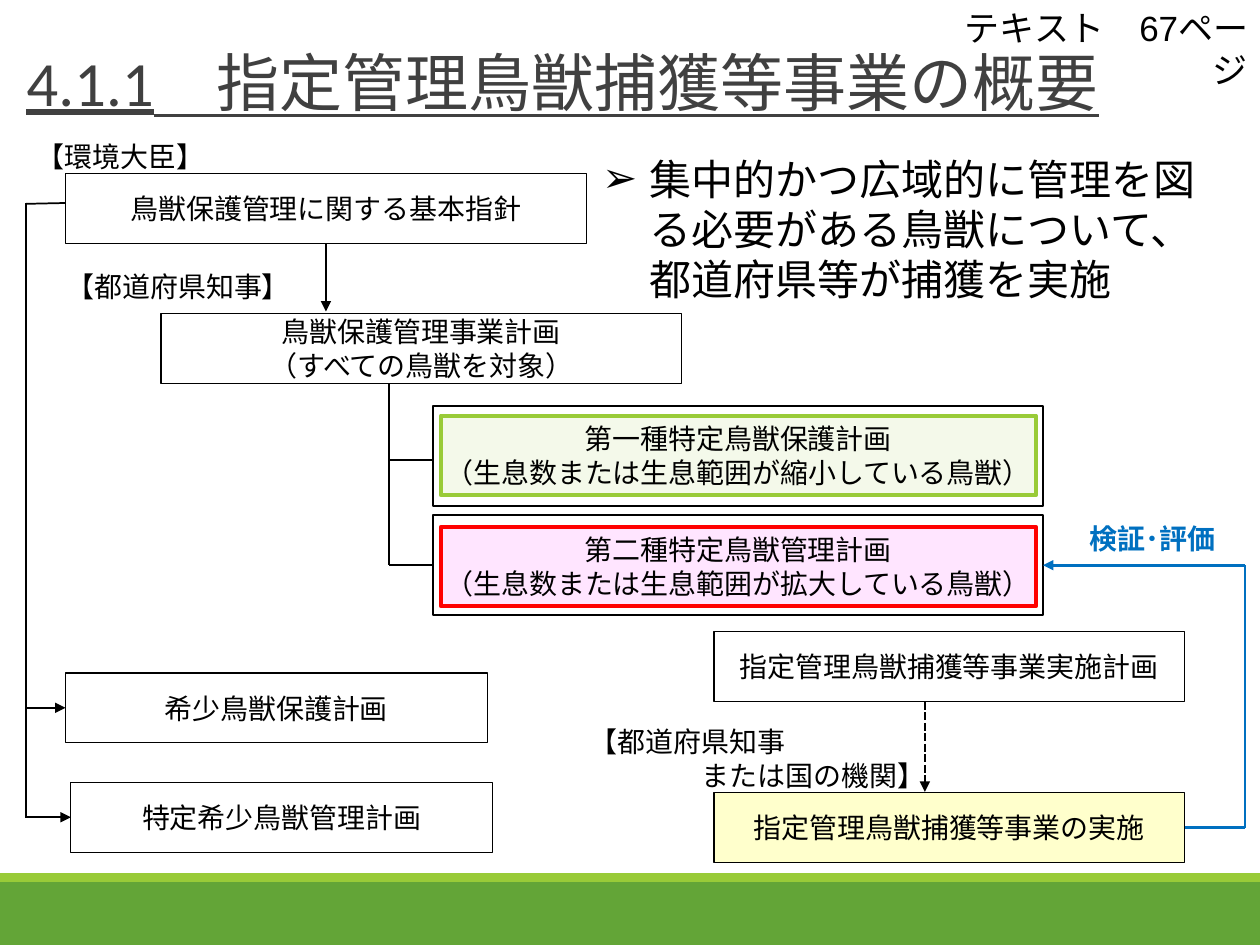
from lxml.etree import SubElement
from pptx import Presentation
from pptx.dml.color import RGBColor
from pptx.enum.dml import MSO_LINE
from pptx.enum.shapes import MSO_CONNECTOR, MSO_SHAPE
from pptx.enum.text import MSO_ANCHOR, MSO_AUTO_SIZE, PP_ALIGN
from pptx.oxml.ns import qn
from pptx.util import Pt

COLORS = {
    "black": "000000", "white": "FFFFFF", "title": "404040", "blue": "0070C0",
    "green": "63A537", "lime": "99CB38", "pale_green": "EBF5D7",
    "pink": "FFCCFF", "red": "FF0000", "yellow": "FFFFCC",
}
LEFT, CENTER, RIGHT = PP_ALIGN.LEFT, PP_ALIGN.CENTER, PP_ALIGN.RIGHT
BOX_FONT = "Noto Sans CJK JP"
TOP, SIDE_LEFT, BOTTOM, SIDE_RIGHT = range(4)

# Bands at the foot: left, top, width, height, fill
BANDS = [(0, 504, 720, 36, "green"), (0, 499, 720, 5, "lime")]

# Boxes: name -> left, top, width, height, fill, line, line width, opacity, lines
BOXES = {
    "frame 1": (247.5, 232, 348.5, 57, "white", "black", 1.25, 100, []),
    "frame 2": (247.5, 294.5, 348.5, 57, "white", "black", 1.25, 100, []),
    "guideline": (37.5, 99, 297.5, 40, "white", "black", 0.75, 100,
                  ["鳥獣保護管理に関する基本指針"]),
    "project plan": (92, 179, 297.5, 40, "white", "black", 0.75, 100,
                     ["鳥獣保護管理事業計画", "（すべての鳥獣を対象）"]),
    "class 1": (252, 237.5, 340, 45.5, "pale_green", "lime", 2.25, 50,
                ["第一種特定鳥獣保護計画", "（生息数または生息範囲が縮小している鳥獣）"]),
    "class 2": (252, 301, 340, 45.5, "pink", "red", 2.25, 50,
                ["第二種特定鳥獣管理計画", "（生息数または生息範囲が拡大している鳥獣）"]),
    "capture plan": (408, 361, 269, 40, "white", "black", 0.75, 100,
                     ["指定管理鳥獣捕獲等事業実施計画"]),
    "capture": (408, 453, 269, 40, "yellow", "black", 0.75, 100,
                ["指定管理鳥獣捕獲等事業の実施"]),
    "rare": (37.5, 384.5, 241, 40, "white", "black", 0.75, 100, ["希少鳥獣保護計画"]),
    "specified rare": (40.5, 447, 241, 40, "white", "black", 0.75, 100,
                       ["特定希少鳥獣管理計画"]),
}

# Labels: left, top, width, height, alignment, wrap, font format, lines
LABEL = {"size": Pt(16), "name": "Calibri"}
LABELS = [
    (541.5, 0, 178.5, 32, RIGHT, True, {"size": Pt(20), "name": "Arial"},
     ["テキスト　67ページ"]),
    (7, 76, 124, 26.5, CENTER, True, LABEL, ["【環境大臣】"]),
    (26, 150.5, 152, 26.5, CENTER, True, LABEL, ["【都道府県知事】"]),
    (330, 410.5, 274, 46, LEFT, True, LABEL, ["【都道府県知事", "または国の機関】"]),
    (615.5, 294.5, 96, 26.5, LEFT, False, LABEL | {"bold": True}, ["検証･評価"]),
]
TITLE = "4.1.1　指定管理鳥獣捕獲等事業の概要"
SUMMARY = "集中的かつ広域的に管理を図る必要がある鳥獣について、都道府県等が捕獲を実施"

# Lines: start, end, colour, width, arrow, dashed
# An end is a point (x, y) or a box name with a side
SPINE, BRANCH, RETURN = 15, 222.5, 711.5
LINES = [
    ((37.5, 116), (SPINE, 116.5), "black", 1, False, False),
    ((SPINE, 116), (SPINE, 467.5), "black", 1, False, False),
    ((SPINE, 404.5), ("rare", SIDE_LEFT), "black", 1, True, False),
    ((SPINE, 467), ("specified rare", SIDE_LEFT), "black", 1, True, False),
    (("guideline", BOTTOM), (186.25, 178), "black", 1, True, False),
    ((BRANCH, 219), (BRANCH, 323), "black", 1, False, False),
    ((BRANCH, 263), (247.5, 263), "black", 1, False, False),
    ((BRANCH, 323), ("frame 2", SIDE_LEFT), "black", 1, False, False),
    ((528.5, 401), (528.5, 452.5), "black", 1.5, True, True),
    (("capture", SIDE_RIGHT), (RETURN, 473), "blue", 1.5, False, False),
    ((RETURN, 323), (RETURN, 473), "blue", 1.5, False, False),
    ((RETURN, 323), ("frame 2", SIDE_RIGHT), "blue", 1.5, True, False),
]


def rgb(name):
    return RGBColor.from_string(COLORS[name])


def write(shape, lines, alignment, font_format, color="black"):
    frame = shape.text_frame
    for index, text in enumerate(lines):
        paragraph = frame.paragraphs[0] if index == 0 else frame.add_paragraph()
        paragraph.alignment = alignment
        run = paragraph.add_run()
        run.text = text
        for key, value in font_format.items():
            setattr(run.font, key, value)
        run.font.color.rgb = rgb(color)
    return frame


def add_box(slide, left, top, width, height, fill, line=None, weight=0,
            opacity=100, lines=()):
    shape = slide.shapes.add_shape(
        MSO_SHAPE.RECTANGLE, Pt(left), Pt(top), Pt(width), Pt(height))
    shape.shadow.inherit = False
    shape.fill.solid()
    shape.fill.fore_color.rgb = rgb(fill)
    if opacity < 100:
        color = shape.fill._xPr.find(qn("a:solidFill"))[0]
        SubElement(color, qn("a:alpha"), val=str(opacity * 1000))
    if line:
        shape.line.color.rgb = rgb(line)
        shape.line.width = Pt(weight)
    else:
        shape.line.fill.background()
    frame = write(shape, lines, CENTER, {"size": Pt(16), "name": BOX_FONT})
    frame.vertical_anchor = MSO_ANCHOR.MIDDLE
    frame.word_wrap = False
    return shape


def add_label(slide, left, top, width, height, alignment, wrap, font_format,
              lines, color="black", fit=MSO_AUTO_SIZE.SHAPE_TO_FIT_TEXT):
    shape = slide.shapes.add_textbox(Pt(left), Pt(top), Pt(width), Pt(height))
    frame = write(shape, lines, alignment, font_format, color)
    frame.word_wrap = wrap
    frame.auto_size = fit
    return frame


def indent(paragraph, left, first=0):
    properties = paragraph._p.get_or_add_pPr()
    properties.set("marL", str(Pt(left)))
    properties.set("indent", str(Pt(first)))
    return properties


def add_line(slide, shapes, start, end, color, weight, arrow, dashed):
    points = [(0, 0) if isinstance(spot[0], str) else spot for spot in (start, end)]
    connector = slide.shapes.add_connector(
        MSO_CONNECTOR.STRAIGHT, *(Pt(value) for point in points for value in point))
    for spot, join in ((start, connector.begin_connect), (end, connector.end_connect)):
        if isinstance(spot[0], str):
            join(shapes[spot[0]], spot[1])
    connector.line.color.rgb = rgb(color)
    connector.line.width = Pt(weight)
    if dashed:
        connector.line.dash_style = MSO_LINE.SQUARE_DOT
    if arrow:
        SubElement(connector.line._get_or_add_ln(), qn("a:tailEnd"), type="triangle")
    SubElement(connector._element.spPr, qn("a:effectLst"))


def main():
    presentation = Presentation()
    presentation.slide_width, presentation.slide_height = Pt(720), Pt(540)
    slide = presentation.slides.add_slide(presentation.slide_layouts[6])

    # Foot bands and diagram boxes
    for band in BANDS:
        add_box(slide, *band)
    shapes = {name: add_box(slide, *box) for name, box in BOXES.items()}

    # Title
    title = add_label(slide, 0, 26, 672, 42, LEFT, True,
                      {"size": Pt(36), "name": "Calibri", "underline": True},
                      [TITLE], "title", MSO_AUTO_SIZE.NONE).paragraphs[0]
    title.line_spacing = 0.9
    indent(title, 8)

    # Summary with arrow bullet
    summary = add_label(slide, 337, 84, 374.5, 94.5, LEFT, True,
                        {"size": Pt(24), "name": "Calibri"}, [SUMMARY])
    properties = indent(summary.paragraphs[0], 27, -27)
    SubElement(properties, qn("a:buFont"), typeface="Arial")
    SubElement(properties, qn("a:buChar"), char="➢")

    # Labels; a second line is set in
    for label in LABELS:
        for paragraph in add_label(
                slide, *label, color="blue" if "bold" in label[6] else "black"
        ).paragraphs[1:]:
            indent(paragraph, 64)

    # Lines and arrows
    for line in LINES:
        add_line(slide, shapes, *line)

    presentation.save("out.pptx")


if __name__ == "__main__":
    main()
